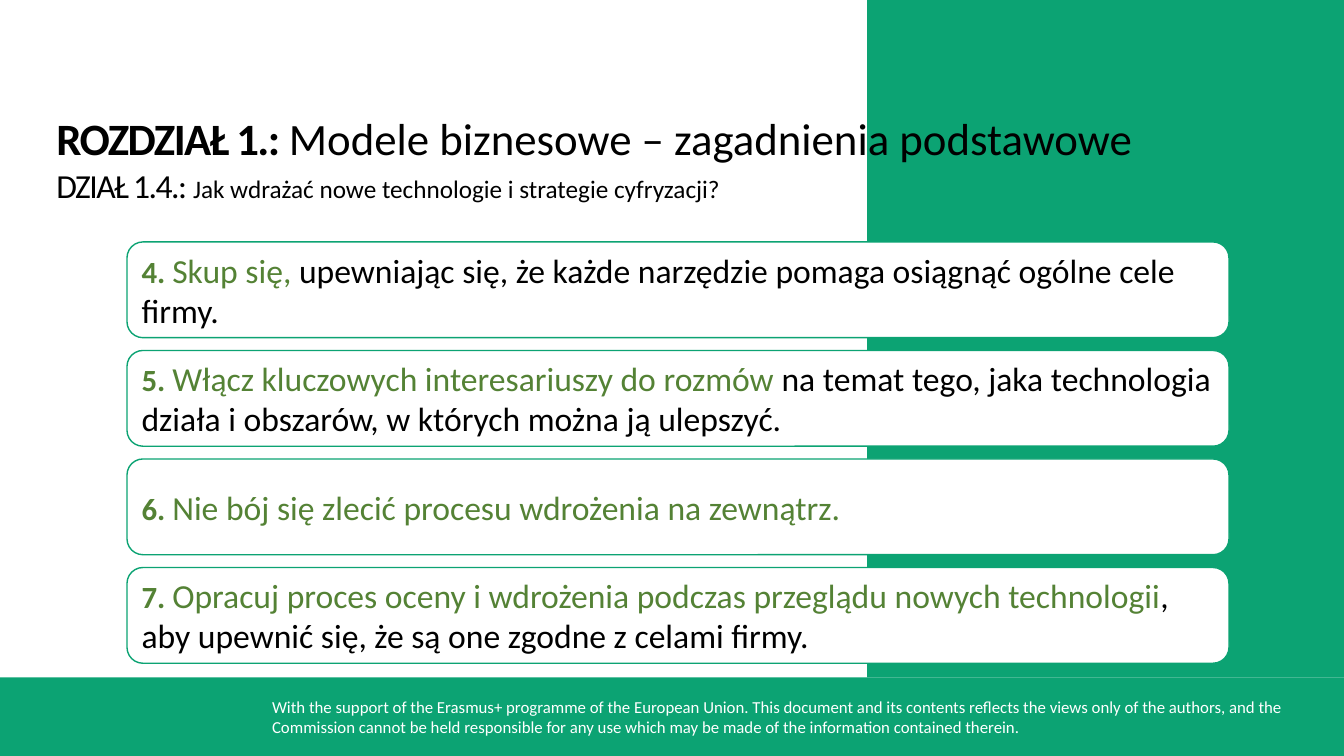
from pptx import Presentation
from pptx.dml.color import RGBColor
from pptx.enum.shapes import MSO_SHAPE
from pptx.enum.text import MSO_ANCHOR, MSO_AUTO_SIZE, PP_ALIGN
from pptx.util import Inches, Pt

RECT, ROUND = MSO_SHAPE.RECTANGLE, MSO_SHAPE.ROUNDED_RECTANGLE
TOP, MIDDLE = MSO_ANCHOR.TOP, MSO_ANCHOR.MIDDLE
LEFT, NO_FIT = PP_ALIGN.LEFT, MSO_AUTO_SIZE.NONE
FONT = "Calibri"
GREEN, OLIVE, WHITE, BLACK = "0CA373", "548235", "FFFFFF", "000000"

HEADS = [
    ("ROZDZIAŁ 1.: ", 32, True, "Modele biznesowe – zagadnienia podstawowe", 32),
    ("DZIAŁ 1.4.: ", 24, False, "Jak wdrażać nowe technologie i strategie cyfryzacji?", 18),
]
STEPS = [
    ("4. ", "Skup się, ",
     "upewniając się, że każde narzędzie pomaga osiągnąć ogólne cele firmy."),
    ("5. ", "Włącz kluczowych interesariuszy do rozmów ",
     "na temat tego, jaka technologia działa i obszarów, w których można ją ulepszyć."),
    ("6. ", "Nie bój się zlecić procesu wdrożenia na zewnątrz.", ""),
    ("7. ", "Opracuj proces oceny i wdrożenia podczas przeglądu nowych technologii",
     ", aby upewnić się, że są one zgodne z celami firmy."),
]
NOTICE = ("With the support of the Erasmus+ programme of the European Union. "
          "This document and its contents reflects the views only of the authors, "
          "and the Commission cannot be held responsible for any use which may be "
          "made of the information contained therein.")


def color(code):
    return RGBColor.from_string(code)


def add_box(slide, kind, x, y, w, h, fill, line=None):
    box = slide.shapes.add_shape(kind, Inches(x), Inches(y), Inches(w), Inches(h))
    box.shadow.inherit = False
    box.fill.solid()
    box.fill.fore_color.rgb = color(fill)
    if line:
        box.line.color.rgb = color(line)
        box.line.width = Pt(1)
    else:
        box.line.fill.background()
    return box


def add_run(para, text, size, code, bold=False, space=0):
    run = para.add_run()
    run.text = text
    run.font.name, run.font.size, run.font.bold = FONT, Pt(size), bold
    run.font.color.rgb = color(code)
    if space:
        run.font._element.set("spc", str(round(space * 100)))


def add_footer(slide, x, y, w, h):
    add_box(slide, RECT, x, y, w, h, GREEN)
    note = slide.shapes.add_textbox(
        Inches(x + 2.6), Inches(y + 0.14), Inches(10.42), Inches(0.5))
    note.text_frame.word_wrap = True
    para = note.text_frame.paragraphs[0]
    para.text = NOTICE
    para.font.name, para.font.size = FONT, Pt(12)
    para.font.color.rgb = color(WHITE)


def add_title(slide, x, y, w, h):
    title = slide.shapes.title
    title.left, title.top = Inches(x), Inches(y)
    title.width, title.height = Inches(w), Inches(h)
    # Lift the title above the side panel
    title._element.getparent().append(title._element)
    frame = title.text_frame
    frame.word_wrap, frame.auto_size = True, NO_FIT
    frame.vertical_anchor = TOP
    for i, (label, size, bold, text, small) in enumerate(HEADS):
        para = frame.add_paragraph() if i else frame.paragraphs[0]
        para.alignment = LEFT
        add_run(para, label, size, BLACK, bold, -1.1)
        add_run(para, text, small, BLACK)


def add_steps(slide, x, y, w, h):
    tall = 0.95
    pitch = (h - tall) / (len(STEPS) - 1)
    for i, (num, key, rest) in enumerate(STEPS):
        card = add_box(slide, ROUND, x, y + i * pitch, w, tall, WHITE, GREEN)
        frame = card.text_frame
        frame.word_wrap, frame.vertical_anchor = True, MIDDLE
        para = frame.paragraphs[0]
        para.alignment = LEFT
        add_run(para, num, 22, OLIVE, True)
        add_run(para, key, 24, OLIVE)
        if rest:
            add_run(para, rest, 24, BLACK)


def main():
    deck = Presentation()
    deck.slide_width, deck.slide_height = Inches(13.33), Inches(7.5)
    slide = deck.slides.add_slide(deck.slide_layouts[5])
    # Green footer and side panel
    add_footer(slide, 0, 6.72, 13.33, 0.78)
    add_box(slide, RECT, 8.6, 0, 4.73, 6.72, GREEN)
    # Headings and numbered cards
    add_title(slide, 0.46, 1.05, 12.75, 1.1)
    add_steps(slide, 1.26, 2.4, 10.93, 4.18)
    deck.save("out.pptx")


if __name__ == "__main__":
    main()
